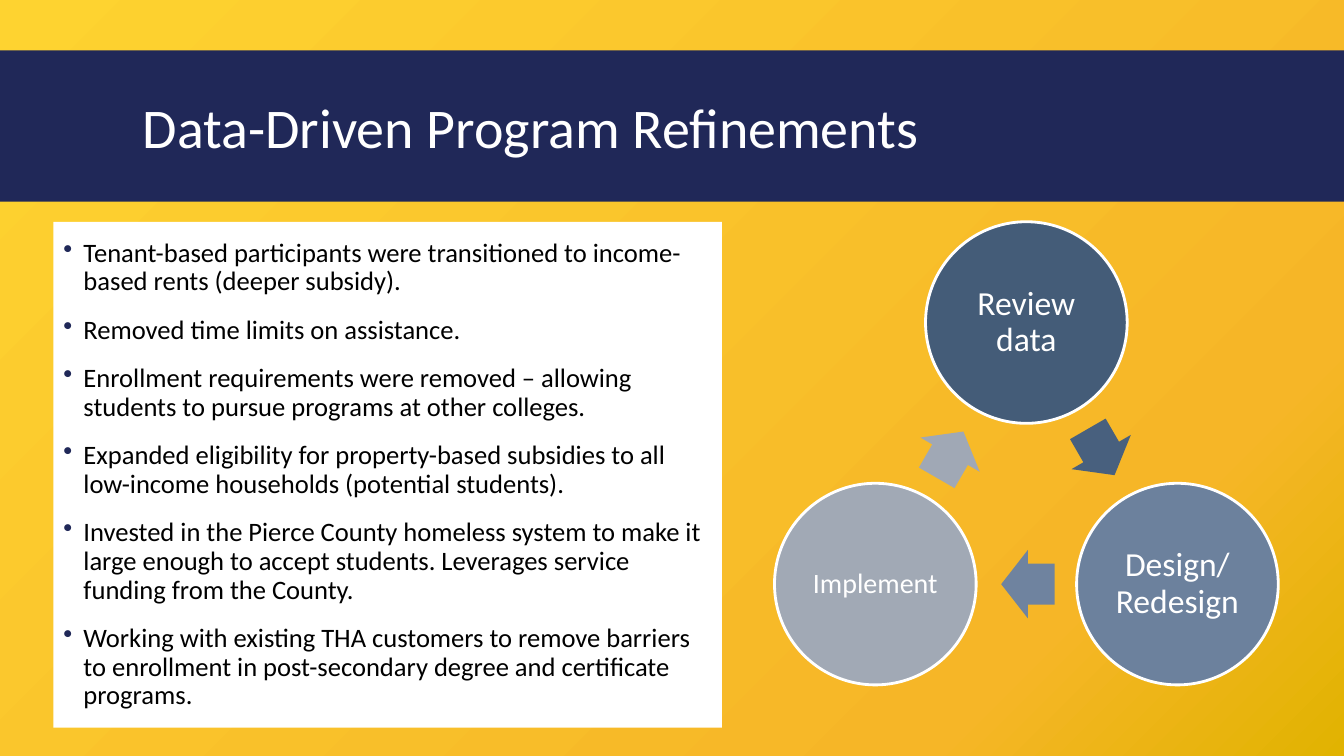
from dataclasses import dataclass
from math import cos, radians, sin

from lxml import etree
from pptx import Presentation
from pptx.dml.color import RGBColor
from pptx.enum.shapes import MSO_SHAPE
from pptx.enum.text import MSO_ANCHOR, PP_ALIGN
from pptx.oxml.ns import qn
from pptx.util import Inches, Pt

RECTANGLE = MSO_SHAPE.RECTANGLE
OVAL = MSO_SHAPE.OVAL
RIGHT_ARROW = MSO_SHAPE.RIGHT_ARROW
MIDDLE = MSO_ANCHOR.MIDDLE
LEFT = PP_ALIGN.LEFT
CENTER = PP_ALIGN.CENTER


@dataclass(frozen=True)
class Theme:
    """Colours, font and type sizes of the slide."""
    font: str = "Calibri"
    navy: str = "202858"
    white: str = "FFFFFF"
    black: str = "000000"
    background: tuple = ((0, "FED330"), (80, "F6B627"), (100, "E1B301"))
    title_size: int = 40
    body_size: int = 19
    step_size: int = 24
    small_step_size: int = 20


THEME = Theme()

REFINEMENTS = [
    "Tenant-based participants were transitioned to income-based rents (deeper subsidy).",
    "Removed time limits on assistance.",
    "Enrollment requirements were removed – allowing students to pursue programs at other colleges.",
    "Expanded eligibility for property-based subsidies to all low-income households (potential students).",
    "Invested in the Pierce County homeless system to make it large enough to accept students. "
    "Leverages service funding from the County.",
    "Working with existing THA customers to remove barriers to enrollment in post-secondary "
    "degree and certificate programs.",
]

CYCLE_STEPS = [
    ("Review data", THEME.step_size, "445C78", "48607E"),
    ("Design/ Redesign", THEME.step_size, "6C819D", "6F839F"),
    ("Implement", THEME.small_step_size, "A1A9B5", "A0A8B5"),
]
CYCLE_CENTER = (10.18, 4.93)
CYCLE_RADIUS = 1.73
CIRCLE_SIZE = 2
ARROW_LENGTH, ARROW_HEIGHT = 0.53, 0.68
ARROW_SETBACK = 0.015


def set_background(slide):
    """Fill the slide with a circular gradient starting at the top left."""
    slide.background.fill.solid()
    properties = slide.element.find(".//" + qn("p:bgPr"))
    properties.remove(properties.find(qn("a:solidFill")))
    gradient = etree.Element(qn("a:gradFill"), rotWithShape="1")
    stops = etree.SubElement(gradient, qn("a:gsLst"))
    for position, color in THEME.background:
        stop = etree.SubElement(stops, qn("a:gs"), pos=str(position * 1000))
        etree.SubElement(stop, qn("a:srgbClr"), val=color)
    circle = etree.SubElement(gradient, qn("a:path"), path="circle")
    etree.SubElement(circle, qn("a:fillToRect"), r="100000", b="100000")
    properties.insert(0, gradient)


def add_filled_shape(slide, kind, left, top, width, height, color, outline=None):
    """Add a flat preset shape with an optional outline."""
    shape = slide.shapes.add_shape(
        kind, Inches(left), Inches(top), Inches(width), Inches(height))
    shape.shadow.inherit = False
    shape.fill.solid()
    shape.fill.fore_color.rgb = RGBColor.from_string(color)
    if outline:
        shape.line.color.rgb = RGBColor.from_string(outline)
        shape.line.width = Pt(2)
    else:
        shape.line.fill.background()
    return shape


def add_bullet(paragraph, color):
    """Give a paragraph a hanging coloured bullet."""
    properties = paragraph._p.get_or_add_pPr()
    properties.set("marL", str(Inches(0.2)))
    properties.set("indent", str(-Inches(0.2)))
    bullet_color = etree.SubElement(properties, qn("a:buClr"))
    etree.SubElement(bullet_color, qn("a:srgbClr"), val=color)
    etree.SubElement(properties, qn("a:buChar"), char="•")


def write_text(shape, *texts, size, color, align=LEFT, line_spacing=0.9,
               space_before=0, space_after=0, bullet_color=None, inset=None):
    """Write one paragraph per text into a shape, centred vertically."""
    frame = shape.text_frame
    frame.word_wrap = True
    frame.vertical_anchor = MIDDLE
    if inset is not None:
        frame.margin_left = frame.margin_right = Inches(inset)
        frame.margin_top = frame.margin_bottom = Inches(inset)
    for index, text in enumerate(texts):
        paragraph = frame.add_paragraph() if index else frame.paragraphs[0]
        if bullet_color:
            add_bullet(paragraph, bullet_color)
        paragraph.alignment = align
        paragraph.line_spacing = line_spacing
        paragraph.space_before = Pt(space_before if index else 0)
        paragraph.space_after = Pt(space_after)
        run = paragraph.add_run()
        run.text = text
        run.font.name = THEME.font
        run.font.size = Pt(size)
        run.font.color.rgb = RGBColor.from_string(color)


def add_title(slide, text):
    """Add the navy band and the title on it."""
    add_filled_shape(slide, RECTANGLE, 0, 0.5, 13.33, 1.5, THEME.navy)
    title = slide.shapes.add_textbox(
        Inches(1.32), Inches(0.6), Inches(10.7), Inches(1.4))
    write_text(title, text, size=THEME.title_size, color=THEME.white,
               line_spacing=0.85)


def add_refinements(slide):
    """Add the white panel with the bulleted refinements."""
    panel = add_filled_shape(slide, RECTANGLE, 0.53, 2.2, 6.63, 5.02, THEME.white)
    write_text(panel, *REFINEMENTS, size=THEME.body_size, color=THEME.black,
               space_before=12, space_after=2, bullet_color=THEME.navy)


def add_step(slide, angle, text, size, color):
    """Add a labelled circle on the cycle at a clockwise angle from the top."""
    left = CYCLE_CENTER[0] + CYCLE_RADIUS * sin(radians(angle)) - CIRCLE_SIZE / 2
    top = CYCLE_CENTER[1] - CYCLE_RADIUS * cos(radians(angle)) - CIRCLE_SIZE / 2
    circle = add_filled_shape(slide, OVAL, left, top, CIRCLE_SIZE, CIRCLE_SIZE,
                              color, THEME.white)
    write_text(circle, text, size=size, color=THEME.white, align=CENTER, inset=0.03)


def add_cycle_arrow(slide, angle, color):
    """Add the arrow leading from the step at this angle to the next one."""
    rotation = angle + 60
    direction = radians(rotation)
    middle_radius = CYCLE_RADIUS / 2
    center_x = (CYCLE_CENTER[0] + middle_radius * sin(direction)
                - ARROW_SETBACK * cos(direction))
    center_y = (CYCLE_CENTER[1] - middle_radius * cos(direction)
                - ARROW_SETBACK * sin(direction))
    arrow = add_filled_shape(
        slide, RIGHT_ARROW, center_x - ARROW_LENGTH / 2, center_y - ARROW_HEIGHT / 2,
        ARROW_LENGTH, ARROW_HEIGHT, color)
    arrow.adjustments[0] = 0.6
    arrow.adjustments[1] = 0.5
    arrow.rotation = rotation


def add_cycle(slide):
    """Add the steps and arrows, spaced evenly around the cycle."""
    for index, (text, size, circle_color, arrow_color) in enumerate(CYCLE_STEPS):
        angle = index * 360 / len(CYCLE_STEPS)
        add_step(slide, angle, text, size, circle_color)
        add_cycle_arrow(slide, angle, arrow_color)


def main():
    """Build the slide and save it."""
    presentation = Presentation()
    presentation.slide_width = Inches(13.33)
    presentation.slide_height = Inches(7.5)
    slide = presentation.slides.add_slide(presentation.slide_layouts[6])
    set_background(slide)
    add_title(slide, "Data-Driven Program Refinements")
    add_refinements(slide)
    add_cycle(slide)
    presentation.save("out.pptx")


if __name__ == "__main__":
    main()
